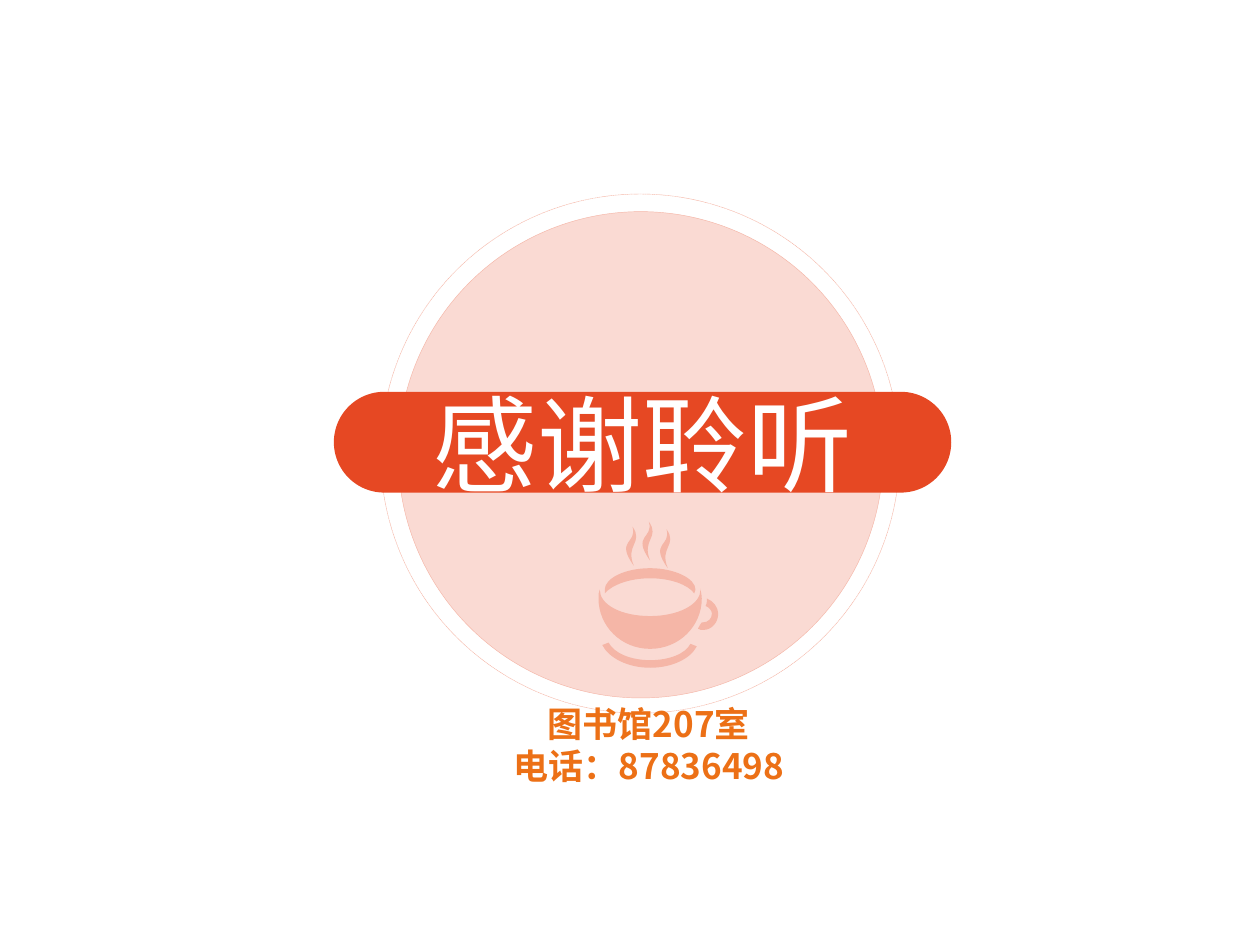
from lxml.etree import SubElement
from pptx import Presentation
from pptx.dml.color import RGBColor
from pptx.enum.dml import MSO_LINE
from pptx.enum.shapes import MSO_SHAPE
from pptx.enum.text import MSO_ANCHOR, MSO_AUTO_SIZE, PP_ALIGN
from pptx.oxml.ns import qn
from pptx.util import Pt

# Content
TITLE = "感谢聆听"
CONTACT = ["图书馆207室", "电话：87836498"]

THEME = dict(font="Noto Sans CJK SC", title=60, body=20, pale="FADAD3", rose="F5B6A7",
             red="E64823", white="FFFFFF", orange="EC7016")

# Places: left, top, width, height
DISC = (227.52, 120.96, 277.2, 277.92)
RING = (217.44, 110.88, 296.64, 296.64)
BAR = (190.8, 223.92, 352.8, 57.6)
NOTE = (190.8, 398.16, 360, 55.44)

# Cup outlines: a start point, then curves (6 numbers) or lines (2 numbers)
CUP_AT = (342, 298.08)
UNIT = 0.72
SAUCER = [(8, 96), (12, 104, 25, 110, 41, 110), (56, 110, 69, 105, 73, 97), (78, 99),
          (73, 109, 58, 116, 41, 116), (23, 116, 8, 108, 3, 98)]
HANDLE = [(86, 61), (91, 63, 95, 68, 95, 73), (95, 80, 90, 86, 83, 86),
          (82, 86, 80, 86, 79, 85), (80, 83, 81, 81, 82, 80), (83, 80),
          (87, 80, 90, 77, 90, 73), (90, 71, 88, 68, 85, 67), (86, 66, 86, 64, 86, 61)]
BOWL = [(81, 53), (81, 55, 82, 58, 82, 61), (82, 83, 64, 101, 41, 101),
        (18, 101, 0, 83, 0, 61), (0, 58, 0, 56, 1, 54), (1, 66, 18, 75, 41, 75),
        (63, 75, 81, 66, 81, 54)]
RIM = [(41, 37), (60, 37, 77, 45, 77, 54), (77, 55, 77, 56, 76, 57),
       (71, 50, 57, 45, 41, 45), (25, 45, 11, 50, 5, 57), (5, 56, 5, 55, 5, 54),
       (5, 45, 21, 37, 41, 37)]
STEAM = [(0, 0), (9, 13, -6, 14, 1, 31), (-14, 10, 4, 14, 0, 0)]
PUFFS = [(54, 6), (27, 4), (40, 0)]


def tint(name):
    return RGBColor.from_string(THEME[name])


def pts(box):
    return [Pt(v) for v in box]


def paint(shape, fill=None, line=None):
    shape.shadow.inherit = False
    if fill:
        shape.fill.solid()
        shape.fill.fore_color.rgb = tint(fill)
    else:
        shape.fill.background()
    if line:
        shape.line.color.rgb = tint(line)
        shape.line.width = Pt(0.25)
    else:
        shape.line.fill.background()
    return shape


def write(para, text, size, color, bold=False):
    para.text = text
    para.alignment = PP_ALIGN.CENTER
    font = para.font
    font.size, font.bold = Pt(THEME[size]), bold
    font.color.rgb = tint(color)
    font.name = THEME["font"]
    SubElement(font._element, qn("a:ea"), typeface=THEME["font"])


def pairs(part, dx, dy):
    return [(Pt((x + dx) * UNIT), Pt((y + dy) * UNIT))
            for x, y in zip(part[::2], part[1::2])]


def draw(shapes, loops, place):
    """Build the outline through its end points, then bend it into curves."""
    pen = shapes.build_freeform(*loops[0][0][0])
    for i, loop in enumerate(loops):
        if i:
            pen.move_to(*loop[0][0])
        pen.add_line_segments([part[-1] for part in loop[1:]], close=True)
    shape = pen.convert_to_shape(*place)
    parts = [part for loop in loops for part in loop[1:]]
    sides = list(shape._element.iter(qn("a:lnTo")))
    for side, part in zip(sides, parts):
        if len(part) == 3:
            side.tag = qn("a:cubicBezTo")
            for i, (x, y) in enumerate(part[:2]):
                side.insert(i, side.makeelement(qn("a:pt"), {"x": str(x), "y": str(y)}))
    return shape


deck = Presentation()
deck.slide_width, deck.slide_height = Pt(720), Pt(540)
slide = deck.slides.add_slide(deck.slide_layouts[6])
shapes = slide.shapes

# Disc and dashed ring
paint(shapes.add_shape(MSO_SHAPE.OVAL, *pts(DISC)), "pale", "rose")
ring = paint(shapes.add_shape(MSO_SHAPE.OVAL, *pts(RING)), line="rose")
ring.line.dash_style = MSO_LINE.SQUARE_DOT

# Title bar
bar = paint(shapes.add_shape(MSO_SHAPE.ROUNDED_RECTANGLE, *pts(BAR)), "red")
bar.adjustments[0] = 0.5
frame = bar.text_frame
frame.margin_left = frame.margin_right = frame.margin_top = frame.margin_bottom = 0
frame.vertical_anchor = MSO_ANCHOR.MIDDLE
write(frame.paragraphs[0], TITLE, "title", "white")

# Steaming cup
outlines = [(path, (0, 0)) for path in (SAUCER, HANDLE, BOWL, RIM)]
outlines += [(STEAM, puff) for puff in PUFFS]
loops = [[pairs(part, *shift) for part in path] for path, shift in outlines]
paint(draw(shapes, loops, pts(CUP_AT)), "rose")

# Contact lines
frame = shapes.add_textbox(*pts(NOTE)).text_frame
frame.word_wrap = True
frame.auto_size = MSO_AUTO_SIZE.SHAPE_TO_FIT_TEXT
for i, text in enumerate(CONTACT):
    para = frame.add_paragraph() if i else frame.paragraphs[0]
    write(para, text, "body", "orange", True)

deck.save("out.pptx")
